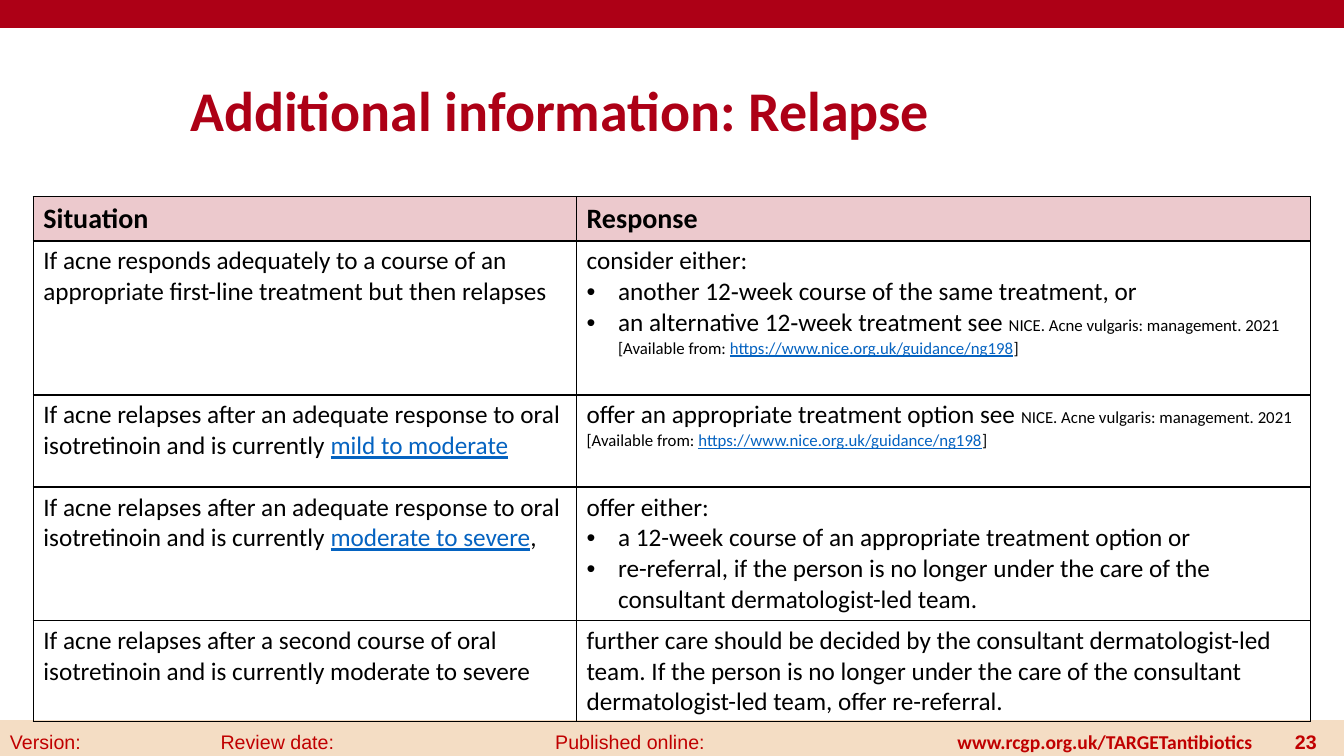
from lxml import etree
from pptx import Presentation
from pptx import util as u
from pptx.dml.color import RGBColor
from pptx.enum import shapes, text
from pptx.oxml.ns import qn

# Content: a cell is a list of (bulleted, runs); a run is (words, style)
TITLE = "Additional information: Relapse"
SOURCE = [
    ("NICE. Acne vulgaris: management. 2021 [Available from: ", "small"),
    ("https://www.nice.org.uk/guidance/ng198", "small_link"),
    ("]", "small"),
]
RELAPSE = ("If acne relapses after an adequate response to oral isotretinoin "
           "and is currently ", "body")
ROWS = [
    ([(False, [("Situation", "head")])],
     [(False, [("Response", "head")])]),
    ([(False, [("If acne responds adequately to a course of an appropriate "
                "first-line treatment but then relapses", "body")])],
     [(False, [("consider either:", "body")]),
      (True, [("another 12‑week course of the same treatment, or", "body")]),
      (True, [("an alternative 12‑week treatment see ", "body")] + SOURCE)]),
    ([(False, [RELAPSE, ("mild to moderate", "link")])],
     [(False, [("offer an appropriate treatment option see ", "body")] + SOURCE)]),
    ([(False, [RELAPSE, ("moderate to severe", "link"), (",", "body")])],
     [(False, [("offer either:", "body")]),
      (True, [("a 12-week course of an appropriate treatment option or", "body")]),
      (True, [("re-referral, if the person is no longer under the care of "
               "the consultant dermatologist-led team.", "body")])]),
    ([(False, [("If acne relapses after a second course of oral isotretinoin "
                "and is currently moderate to severe", "body")])],
     [(False, [("further care should be decided by the consultant "
                "dermatologist-led team. If the person is no longer under the "
                "care of the consultant dermatologist-led team, offer "
                "re-referral.", "body")])]),
]
COL_WIDTHS = [388, 524.2]
ROW_HEIGHTS = [31.5, 110, 65.8, 95.2, 72.5]
TABLE_LEFT, TABLE_TOP = 23.8, 140.6

# Bars: left, top, width, height, colour
BARS = [(0, 514.8, 960, 28.8, "F4DDC4"), (0, -0.7, 960, 20.2, "AD0016")]

# Footer: words, left, width, style, alignment
FOOTER_TOP, FOOTER_HEIGHT = 517.5, 28.8
FOOTER = [
    ("www.rcgp.org.uk/TARGETantibiotics", 676.8, 230.4, "site", "LEFT"),
    ("23", 905.8, 41.8, "number", "RIGHT"),
    ("Version:", 0, 65.5, "footer", "LEFT"),
    ("Review date:", 150.5, 119.5, "footer", "LEFT"),
    ("Published online:", 389.5, 126.7, "footer", "LEFT"),
]

# Styles: font, size, colour, bold, underline
STYLES = {
    "title": ("Calibri", 40, "AD0016", True, False),
    "head": ("Calibri", 20, "000000", True, False),
    "body": ("Calibri", 18, "000000", False, False),
    "link": ("Calibri", 18, "0563C1", False, True),
    "small": ("Calibri", 12, "000000", False, False),
    "small_link": ("Calibri", 12, "0563C1", False, True),
    "site": ("Calibri", 14, "C00000", True, False),
    "number": ("Arial", 14, "C00000", True, False),
    "footer": ("Arial", 14, "C00000", False, False),
}


def color(value):
    return RGBColor.from_string(value)


def add_run(p, words, style):
    name, size, ink, bold, underline = STYLES[style]
    r = p.add_run()
    r.text = words
    r.font.color.rgb = color(ink)
    formats = {"name": name, "size": u.Pt(size), "bold": bold, "underline": underline}
    for key, value in formats.items():
        setattr(r.font, key, value)


def add_text(s, box, words, style, align="LEFT", anchor="TOP"):
    tf = s.shapes.add_textbox(*map(u.Pt, box)).text_frame
    tf.word_wrap = True
    tf.vertical_anchor = getattr(text.MSO_ANCHOR, anchor)
    p = tf.paragraphs[0]
    p.alignment = getattr(text.PP_ALIGN, align)
    add_run(p, words, style)
    return p


def add_bullet(p):
    pPr = p._p.get_or_add_pPr()
    pPr.set("marL", str(u.Pt(22.5)))
    pPr.set("indent", str(-u.Pt(22.5)))
    etree.SubElement(pPr, qn("a:buFont")).set("typeface", "Arial")
    etree.SubElement(pPr, qn("a:buChar")).set("char", "•")


def add_borders(cell):
    tcPr = cell._tc.get_or_add_tcPr()
    for side in ("lnL", "lnR", "lnT", "lnB"):
        ln = etree.SubElement(tcPr, qn("a:" + side), w=str(u.Pt(1)))
        fill = etree.SubElement(ln, qn("a:solidFill"))
        etree.SubElement(fill, qn("a:srgbClr"), val="000000")


def fill_cell(cell, paragraphs, is_head):
    add_borders(cell)
    if is_head:
        cell.fill.solid()
        cell.fill.fore_color.rgb = color("ECC9CD")
    else:
        cell.fill.background()
    tf = cell.text_frame
    for i, (bulleted, runs) in enumerate(paragraphs):
        p = tf.add_paragraph() if i else tf.paragraphs[0]
        if bulleted:
            add_bullet(p)
        for words, style in runs:
            add_run(p, words, style)


def main():
    prs = Presentation()
    prs.slide_width, prs.slide_height = u.Pt(960), u.Pt(540)
    s = prs.slides.add_slide(prs.slide_layouts[6])

    # Top and bottom bars
    for *box, ink in BARS:
        sp = s.shapes.add_shape(shapes.MSO_SHAPE.RECTANGLE, *map(u.Pt, box))
        sp.shadow.inherit = False
        sp.fill.solid()
        sp.fill.fore_color.rgb = color(ink)
        sp.line.color.rgb = color(ink)
        sp.line.width = u.Pt(1)

    # Footer and title
    for words, left, width, style, align in FOOTER:
        add_text(s, (left, FOOTER_TOP, width, FOOTER_HEIGHT), words, style, align)
    p = add_text(s, (128.9, 28.8, 764.6, 104.4), TITLE, "title", anchor="MIDDLE")
    p.line_spacing = 0.9

    # Table
    box = (TABLE_LEFT, TABLE_TOP, sum(COL_WIDTHS), sum(ROW_HEIGHTS))
    table = s.shapes.add_table(len(ROWS), len(COL_WIDTHS), *map(u.Pt, box)).table
    table.horz_banding = False
    for column, width in zip(table.columns, COL_WIDTHS):
        column.width = u.Pt(width)
    for i, (row, height) in enumerate(zip(table.rows, ROW_HEIGHTS)):
        row.height = u.Pt(height)
        for cell, paragraphs in zip(row.cells, ROWS[i]):
            fill_cell(cell, paragraphs, i == 0)

    prs.save("out.pptx")


if __name__ == "__main__":
    main()
